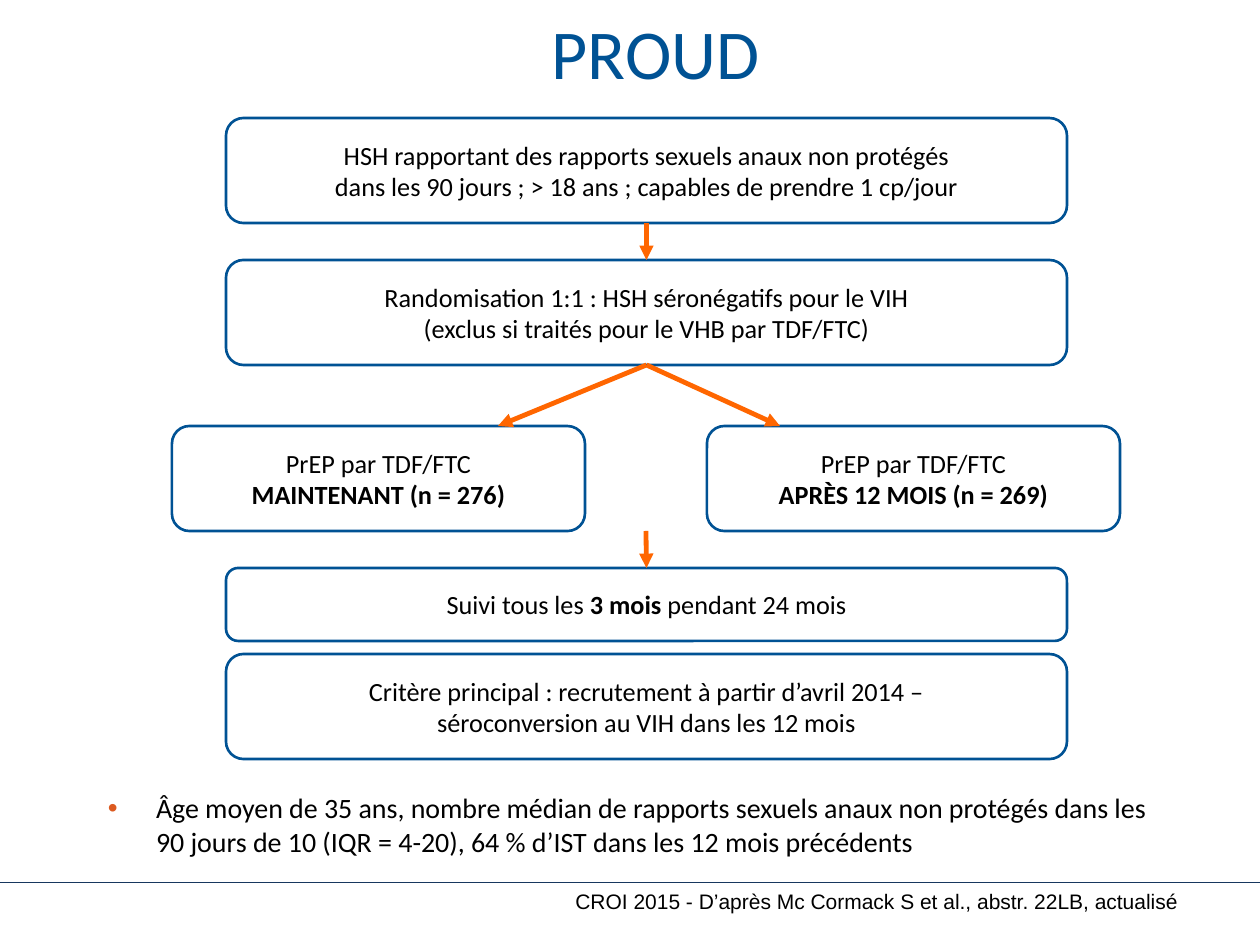
from lxml import etree
from pptx import Presentation
from pptx.dml.color import RGBColor
from pptx.enum.shapes import MSO_CONNECTOR, MSO_SHAPE
from pptx.enum.text import MSO_ANCHOR, MSO_AUTO_SIZE, PP_ALIGN
from pptx.oxml.ns import qn
from pptx.util import Emu, Pt

STRAIGHT = MSO_CONNECTOR.STRAIGHT
ROUNDED = MSO_SHAPE.ROUNDED_RECTANGLE
MIDDLE, TOP = MSO_ANCHOR.MIDDLE, MSO_ANCHOR.TOP
LEFT, CENTER, RIGHT = PP_ALIGN.LEFT, PP_ALIGN.CENTER, PP_ALIGN.RIGHT
BLUE, ORANGE, BLACK, WHITE = "005294", "FF6600", "000000", "FFFFFF"
WIDE_X, WIDE_W = 226, 841
ARM_W, BOX_H = 413, 105
ARM_XS = (172, 707)


def px(n):
    """Turn pixels at 126 to the inch into EMU."""
    return Emu(round(n * 914400 / 126))


def rgb(code):
    """Turn a hex string into a colour."""
    return RGBColor.from_string(code)


def write(tf, text, size=15, font="Calibri", color=BLACK, align=CENTER,
          anchor=MIDDLE, inset=None, spacing=None):
    """Write text: newline splits paragraphs, \\v breaks lines, ** toggles bold."""
    tf.word_wrap = True
    tf.auto_size = MSO_AUTO_SIZE.NONE
    tf.vertical_anchor = anchor
    if inset is not None:
        tf.margin_left = tf.margin_right = tf.margin_top = tf.margin_bottom = inset
    for n, line in enumerate(text.split("\n")):
        p = tf.add_paragraph() if n else tf.paragraphs[0]
        p.alignment = align
        if spacing:
            p.line_spacing = Pt(spacing)
        for i, piece in enumerate(line.split("**")):
            for j, part in enumerate(piece.split("\v")):
                if j:
                    p.add_line_break()
                    etree.SubElement(p._p[-1], qn("a:rPr"), sz=str(size * 100))
                if part:
                    r = p.add_run()
                    r.text = part
                    r.font.size, r.font.name = Pt(size), font
                    r.font.bold = i % 2 == 1
                    r.font.color.rgb = rgb(color)


def add_title(s, text, x, y, w, h):
    """Place and format the title placeholder."""
    sp = s.shapes.title
    sp.left, sp.top, sp.width, sp.height = map(px, (x, y, w, h))
    write(sp.text_frame, text, size=40, color=BLUE, inset=0, spacing=22)


def add_box(s, text, x, y, w, h=BOX_H):
    """Add a rounded, outlined step of the study."""
    sp = s.shapes.add_shape(ROUNDED, *map(px, (x, y, w, h)))
    sp.shadow.inherit = False
    sp.fill.solid()
    sp.fill.fore_color.rgb = rgb(WHITE)
    sp.line.color.rgb = rgb(BLUE)
    sp.line.width = Pt(1.5)
    write(sp.text_frame, text)
    return sp


def add_text(s, text, x, y, w, h, **fmt):
    """Add a text box."""
    sp = s.shapes.add_textbox(*map(px, (x, y, w, h)))
    write(sp.text_frame, text, anchor=TOP, **fmt)
    return sp


def add_bullet(p, color, indent):
    """Give a paragraph a coloured bullet with a hanging indent."""
    pPr = p._p.get_or_add_pPr()
    pPr.set("marL", str(px(indent)))
    pPr.set("indent", str(-px(indent)))
    clr = etree.SubElement(pPr, qn("a:buClr"))
    etree.SubElement(clr, qn("a:srgbClr"), val=color)
    etree.SubElement(pPr, qn("a:buFont"), typeface="Arial")
    etree.SubElement(pPr, qn("a:buChar"), char="•")


def add_line(s, x1, y1, x2, y2, color, width):
    """Add a straight line without shadow."""
    c = s.shapes.add_connector(STRAIGHT, *map(px, (x1, y1, x2, y2)))
    c.line.color.rgb = rgb(color)
    c.line.width = Pt(width)
    etree.SubElement(c._element.spPr, qn("a:effectLst"))
    return c


def add_arrow(s, x1, y1, x2, y2, begin=None, end=None):
    """Add an orange arrow, joined to the bottom of begin and the top of end."""
    c = add_line(s, x1, y1, x2, y2, ORANGE, 2.75)
    etree.SubElement(c.line._get_or_add_ln(), qn("a:tailEnd"), type="triangle")
    if begin is not None:
        c.begin_connect(begin, 2)
    if end is not None:
        c.end_connect(end, 0)


def main():
    """Build the slide."""
    prs = Presentation()
    prs.slide_width, prs.slide_height = px(1260), px(945)
    s = prs.slides.add_slide(prs.slide_layouts[5])

    add_line(s, 0, 882, 1260, 882, "17375E", 0.25)
    add_title(s, "PROUD", 146, 33, 1019, 83)
    note = add_text(s, "Âge moyen de 35 ans, nombre médian de rapports sexuels anaux non protégés "
                    "dans les 90 jours de 10 (IQR = 4-20), 64 % d’IST dans les 12 mois précédents",
                    108, 791, 1051, 91, size=16, align=LEFT, inset=0)
    add_bullet(note.text_frame.paragraphs[0], "DC5A20", 48)

    eligible = add_box(s, "HSH rapportant des rapports sexuels anaux non protégés\v"
                       "dans les 90 jours ; > 18 ans ; capables de prendre 1 cp/jour",
                       WIDE_X, 118, WIDE_W)
    randomised = add_box(s, "Randomisation 1:1 : HSH séronégatifs pour le VIH\v"
                         "(exclus si traités pour le VHB par TDF/FTC)", WIDE_X, 260, WIDE_W)
    arms = ("MAINTENANT (n = 276)", "APRÈS 12 MOIS (n = 269)")
    for x, arm in zip(ARM_XS, arms):
        add_box(s, f"PrEP par TDF/FTC\n**{arm}**", x, 426, ARM_W)
    followup = add_box(s, "Suivi tous les **3 mois **pendant 24 mois", WIDE_X, 568, WIDE_W, 73)
    add_box(s, "Critère principal : recrutement à partir d’avril 2014 –\v"
            "séroconversion au VIH dans les 12 mois", WIDE_X, 654, WIDE_W)

    mid = WIDE_X + WIDE_W // 2
    add_arrow(s, mid, 223, mid, 260, begin=eligible, end=randomised)
    for x in (498, 780):
        add_arrow(s, mid, 365, x, 426, begin=randomised)
    add_arrow(s, mid, 531, mid, 568, end=followup)

    add_text(s, "CROI 2015 - D’après Mc Cormack S et al., abstr. 22LB, actualisé ",
             445, 882, 752, 64, size=12, font="Arial", align=RIGHT)
    prs.save("out.pptx")


if __name__ == "__main__":
    main()
